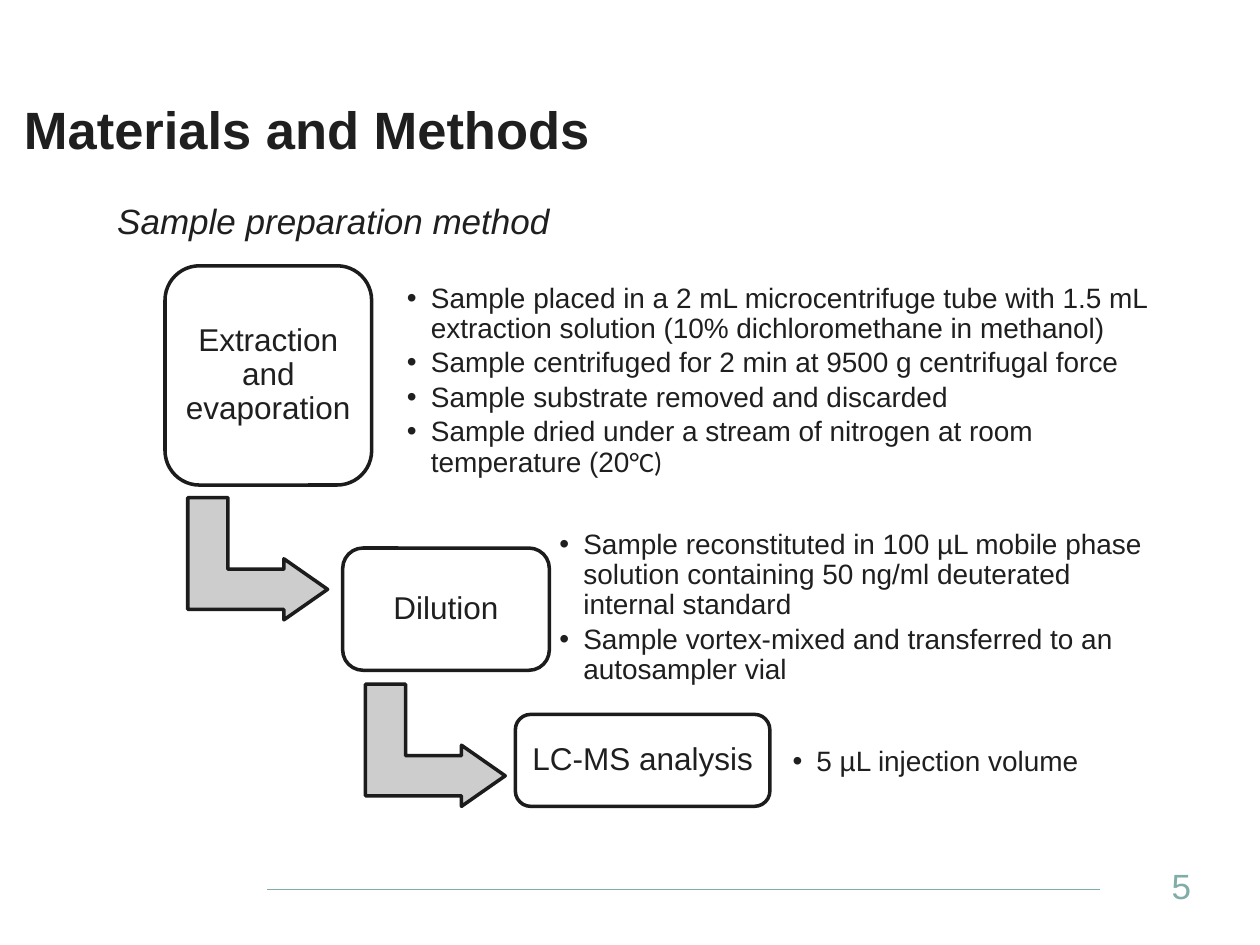
from lxml.etree import SubElement
from pptx import Presentation
from pptx.dml.color import RGBColor
from pptx.enum.shapes import MSO_CONNECTOR as Connector, MSO_SHAPE as Shape
from pptx.enum.text import MSO_ANCHOR as Anchor, MSO_AUTO_SIZE as AutoSize, PP_ALIGN as Align
from pptx.oxml.ns import qn
from pptx.util import Inches, Pt

COLORS = {"text": "1F1F1F", "outline": "1C1C1C", "arrow": "CDCDCD",
          "box": "FFFFFF", "accent": "81ADA8"}
BULLET_INDENT = Inches(0.19)

# Each step: name, its box, its details, their box
STEPS = [
    ("Extraction and evaporation", (1.31, 2.11, 1.64, 1.74),
     ["Sample placed in a 2 mL microcentrifuge tube with 1.5 mL extraction "
      "solution (10% dichloromethane in methanol)",
      "Sample centrifuged for 2 min at 9500 g centrifugal force",
      "Sample substrate removed and discarded",
      [("Sample dried under a stream of nitrogen at room temperature (20", "Arial"),
       ("°C)", "Calibri")]],
     (3.16, 2.22, 6.12, 1.61)),
    ("Dilution", (2.72, 4.35, 1.64, 0.97),
     ["Sample reconstituted in 100 µL mobile phase solution containing "
      "50 ng/ml deuterated internal standard",
      "Sample vortex-mixed and transferred to an autosampler vial"],
     (4.37, 4.27, 4.92, 1.11)),
    ("LC-MS analysis", (4.09, 5.67, 2.02, 0.73),
     ["5 µL injection volume"], (6.22, 5.5, 3.6, 1.11)),
]
ARROWS = [(1.56, 3.88, 0.97, 1.11), (2.97, 5.36, 0.97, 1.11)]


def rgb(name):
    return RGBColor.from_string(COLORS[name])


def inches(box):
    return [Inches(length) for length in box]


def place(shape, box):
    shape.left, shape.top, shape.width, shape.height = inches(box)


def set_bullet(paragraph, char):
    """Hang the paragraph on a bullet, or take the bullet away."""
    props = paragraph._p.get_or_add_pPr()
    indent = BULLET_INDENT if char else 0
    props.set("marL", str(indent))
    props.set("indent", str(-indent))
    if char:
        SubElement(props, qn("a:buFont")).set("typeface", "Arial")
        SubElement(props, qn("a:buChar")).set("char", char)
    else:
        SubElement(props, qn("a:buNone"))


def write(shape, paragraphs, *, size, color="text", bold=False, italic=False,
          align=Align.LEFT, anchor=Anchor.TOP, inset=None, bullet=None,
          line_spacing=1.0, space_after=0):
    frame = shape.text_frame
    frame.word_wrap = True
    frame.auto_size = AutoSize.NONE
    frame.vertical_anchor = anchor
    if inset is not None:
        frame.margin_left = frame.margin_right = Inches(inset)
        frame.margin_top = frame.margin_bottom = Inches(inset)
    for index, content in enumerate(paragraphs):
        paragraph = frame.add_paragraph() if index else frame.paragraphs[0]
        set_bullet(paragraph, bullet)
        paragraph.alignment = align
        paragraph.line_spacing = line_spacing
        paragraph.space_before = Pt(0)
        paragraph.space_after = Pt(space_after)
        pieces = [(content, "Arial")] if isinstance(content, str) else content
        for words, typeface in pieces:
            run = paragraph.add_run()
            run.text = words
            run.font.name, run.font.size = typeface, Pt(size)
            run.font.bold, run.font.italic = bold, italic
            run.font.color.rgb = rgb(color)


def add_outlined(slide, kind, box, fill):
    shape = slide.shapes.add_shape(kind, *inches(box))
    shape.shadow.inherit = False
    shape.fill.solid()
    shape.fill.fore_color.rgb = rgb(fill)
    shape.line.color.rgb = rgb("outline")
    shape.line.width = Pt(2)
    return shape


def add_step(slide, name, name_box, details, details_box):
    step = add_outlined(slide, Shape.ROUNDED_RECTANGLE, name_box, "box")
    write(step, [name], size=18, align=Align.CENTER, anchor=Anchor.MIDDLE,
          inset=0.07, line_spacing=0.9, space_after=6.3)
    notes = slide.shapes.add_textbox(*inches(details_box))
    write(notes, details, size=16, anchor=Anchor.MIDDLE, inset=0.07,
          bullet="•", line_spacing=0.9, space_after=2.4)


def add_step_arrow(slide, box):
    arrow = add_outlined(slide, Shape.BENT_UP_ARROW, box, "arrow")
    arrow.rotation = 90
    for index, value in enumerate((0.328, 0.25, 0.358)):
        arrow.adjustments[index] = value


def add_headings(slide, title_box, body_box):
    title, subtitle = slide.shapes.title, slide.placeholders[1]
    place(title, title_box)
    write(title, ["Materials and Methods"], size=30, bold=True)
    place(subtitle, body_box)
    write(subtitle, ["Sample preparation method"], size=20, italic=True)


def add_footer(slide, rule_ends, number_box):
    rule = slide.shapes.add_connector(Connector.STRAIGHT, *inches(rule_ends))
    rule.line.color.rgb = rgb("accent")
    rule.line.width = Pt(0.5)
    SubElement(rule._element.spPr, qn("a:effectLst"))
    number = slide.shapes.add_textbox(*inches(number_box))
    write(number, ["5"], size=20, color="accent", anchor=Anchor.MIDDLE)


def main():
    deck = Presentation()
    deck.slide_width, deck.slide_height = Inches(10), Inches(7.5)
    slide = deck.slides.add_slide(deck.slide_layouts[1])

    # Title, subtitle and footer
    add_headings(slide, (0.09, 0.72, 7.93, 0.82), (0.83, 1.53, 8.52, 4.15))
    add_footer(slide, (2.12, 7.06, 8.73, 7.06), (9.2, 6.83, 0.8, 0.4))

    # Step-down process
    for box in ARROWS:
        add_step_arrow(slide, box)
    for step in STEPS:
        add_step(slide, *step)

    deck.save("out.pptx")


if __name__ == "__main__":
    main()
